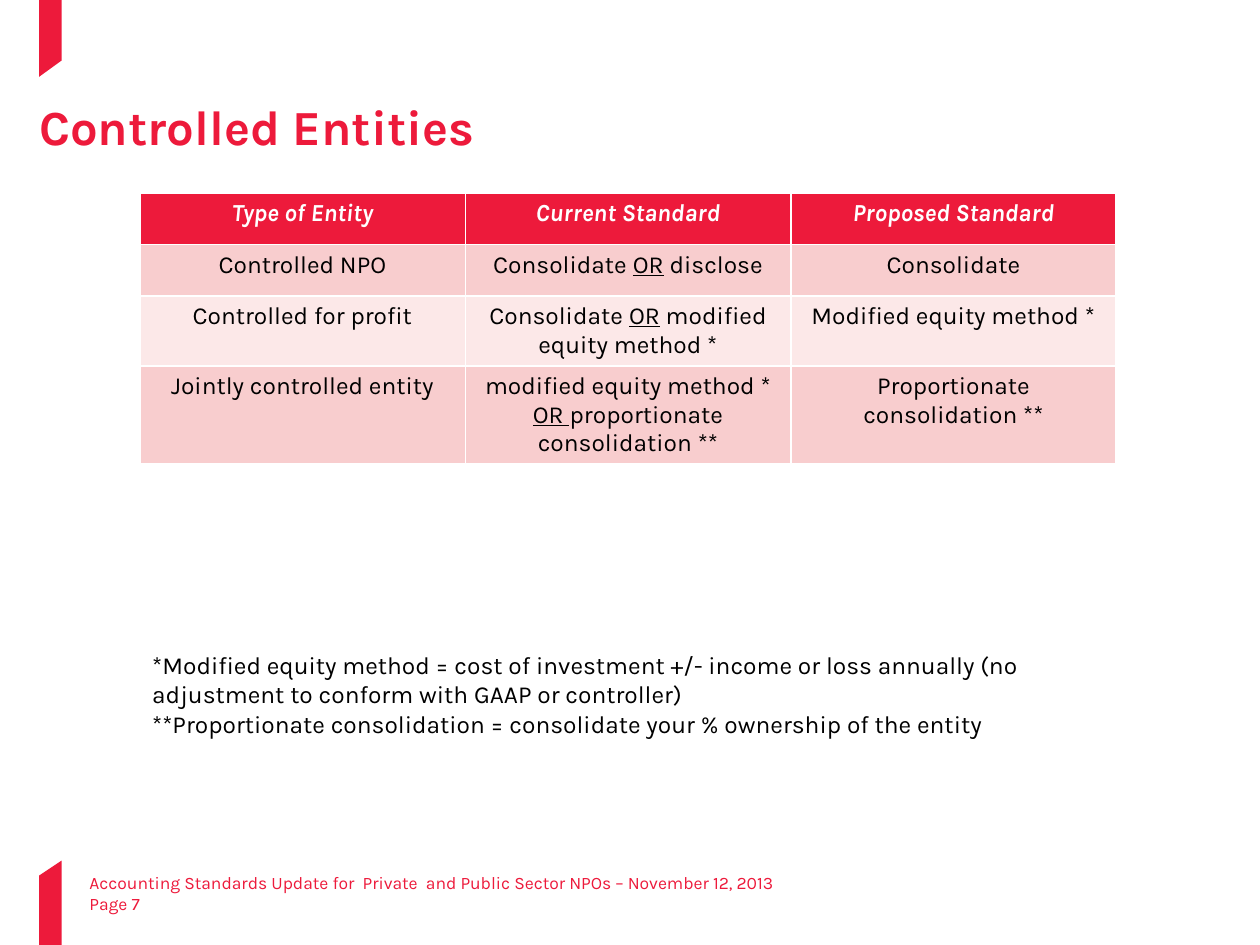
"""Build the Controlled Entities slide with its comparison table and notes."""
from dataclasses import dataclass

from pptx import Presentation
from pptx.dml.color import RGBColor
from pptx.enum.text import MSO_ANCHOR, PP_ALIGN
from pptx.util import Inches, Pt

FONT = "Karla"
RED, WHITE, BLACK = "ED1A3B", "FFFFFF", "000000"
DARK_BAND, LIGHT_BAND = "F8CDCE", "FCE8E8"
UNDERLINED = ("OR", "OR ")


@dataclass(frozen=True)
class TextBlock:
    """Describe a text box: place, paragraphs and look."""
    left: float
    top: float
    width: float
    height: float
    lines: tuple
    size: int
    color: str
    padded: bool = False


BLADES = (
    ((0.49, 0.48), (0.49, 0), (0.31, 0), (0.31, 0.61)),
    ((0.31, 6.95), (0.31, 7.5), (0.49, 7.5), (0.49, 6.83)),
)
ROWS = (
    (("Type of Entity",), ("Current Standard",), ("Proposed Standard",)),
    (("Controlled NPO",), ("Consolidate ", "OR", " disclose"), ("Consolidate",)),
    (("Controlled for profit",),
     ("Consolidate ", "OR", " modified equity method *"),
     ("Modified equity method *",)),
    (("Jointly controlled entity",),
     ("modified equity method * ", "OR ", "proportionate consolidation **"),
     ("Proportionate consolidation **",)),
)
TEXT_BLOCKS = (
    TextBlock(1.11, 5.11, 7.75, 0.81, (
        "*Modified equity method = cost of investment +/- income or loss annually "
        "(no adjustment to conform with GAAP or controller)",
        "**Proportionate consolidation = consolidate your % ownership of the entity",
    ), 14, BLACK, padded=True),
    TextBlock(0.71, 6.92, 7.32, 0.17, (
        "Accounting Standards Update for  Private  and Public Sector NPOs – November 12, 2013",
    ), 10, RED),
    TextBlock(0.71, 7.09, 2.33, 0.18, ("Page 7",), 10, RED),
)


def rgb(color: str) -> RGBColor:
    """Turn a hex string into a colour."""
    return RGBColor.from_string(color)


def format_font(font, color: str, **values) -> None:
    """Apply the slide font, a colour and further font values."""
    for name, value in {"name": FONT, **values}.items():
        setattr(font, name, value)
    font.color.rgb = rgb(color)


def clear_margins(frame) -> None:
    """Remove the inner margins of a text frame."""
    for side in ("left", "top", "right", "bottom"):
        setattr(frame, f"margin_{side}", 0)


def draw_blade(slide, points: tuple) -> None:
    """Draw one slanted red bar."""
    corners = [(Inches(x), Inches(y)) for x, y in points]
    builder = slide.shapes.build_freeform(*corners[0])
    builder.add_line_segments(corners[1:], close=True)
    shape = builder.convert_to_shape()
    shape.shadow.inherit = False
    shape.fill.solid()
    shape.fill.fore_color.rgb = rgb(RED)
    shape.line.fill.background()


def draw_title(slide, text: str) -> None:
    """Place and format the title placeholder."""
    title = slide.shapes.title
    places = {"left": 0.31, "top": 0.74, "width": 9.37, "height": 1.55}
    for name, value in places.items():
        setattr(title, name, Inches(value))
    frame = title.text_frame
    clear_margins(frame)
    frame.vertical_anchor = MSO_ANCHOR.TOP
    paragraph = frame.paragraphs[0]
    paragraph.text = text
    paragraph.alignment = PP_ALIGN.LEFT
    paragraph.line_spacing = 1.05
    format_font(paragraph.runs[0].font, RED, size=Pt(28), bold=True)


def draw_table(slide) -> None:
    """Draw the comparison table with a red header and pink bands."""
    table = slide.shapes.add_table(
        len(ROWS), len(ROWS[0]), Inches(1.11), Inches(1.53), Inches(7.75), Inches(1.64)
    ).table
    for row_index, row in enumerate(ROWS):
        header = row_index == 0
        band = RED if header else DARK_BAND if row_index % 2 else LIGHT_BAND
        table.rows[row_index].height = Inches(0.41)
        for column_index, pieces in enumerate(row):
            cell = table.cell(row_index, column_index)
            cell.fill.solid()
            cell.fill.fore_color.rgb = rgb(band)
            paragraph = cell.text_frame.paragraphs[0]
            paragraph.alignment = PP_ALIGN.CENTER
            for piece in pieces:
                run = paragraph.add_run()
                run.text = piece
                format_font(run.font, WHITE if header else BLACK, size=Pt(14),
                            bold=header, italic=header, underline=piece in UNDERLINED)


def draw_text(slide, block: TextBlock) -> None:
    """Draw one text box."""
    box = slide.shapes.add_textbox(
        *map(Inches, (block.left, block.top, block.width, block.height)))
    frame = box.text_frame
    frame.word_wrap = True
    if not block.padded:
        clear_margins(frame)
    frame.text = "\n".join(block.lines)
    for paragraph in frame.paragraphs:
        format_font(paragraph.runs[0].font, block.color, size=Pt(block.size))


def main() -> None:
    """Build and save the presentation."""
    presentation = Presentation()
    presentation.slide_width, presentation.slide_height = Inches(10), Inches(7.5)
    slide = presentation.slides.add_slide(presentation.slide_layouts[5])
    for points in BLADES:
        draw_blade(slide, points)
    draw_title(slide, "Controlled Entities")
    draw_table(slide)
    for block in TEXT_BLOCKS:
        draw_text(slide, block)
    presentation.save("out.pptx")


if __name__ == "__main__":
    main()
